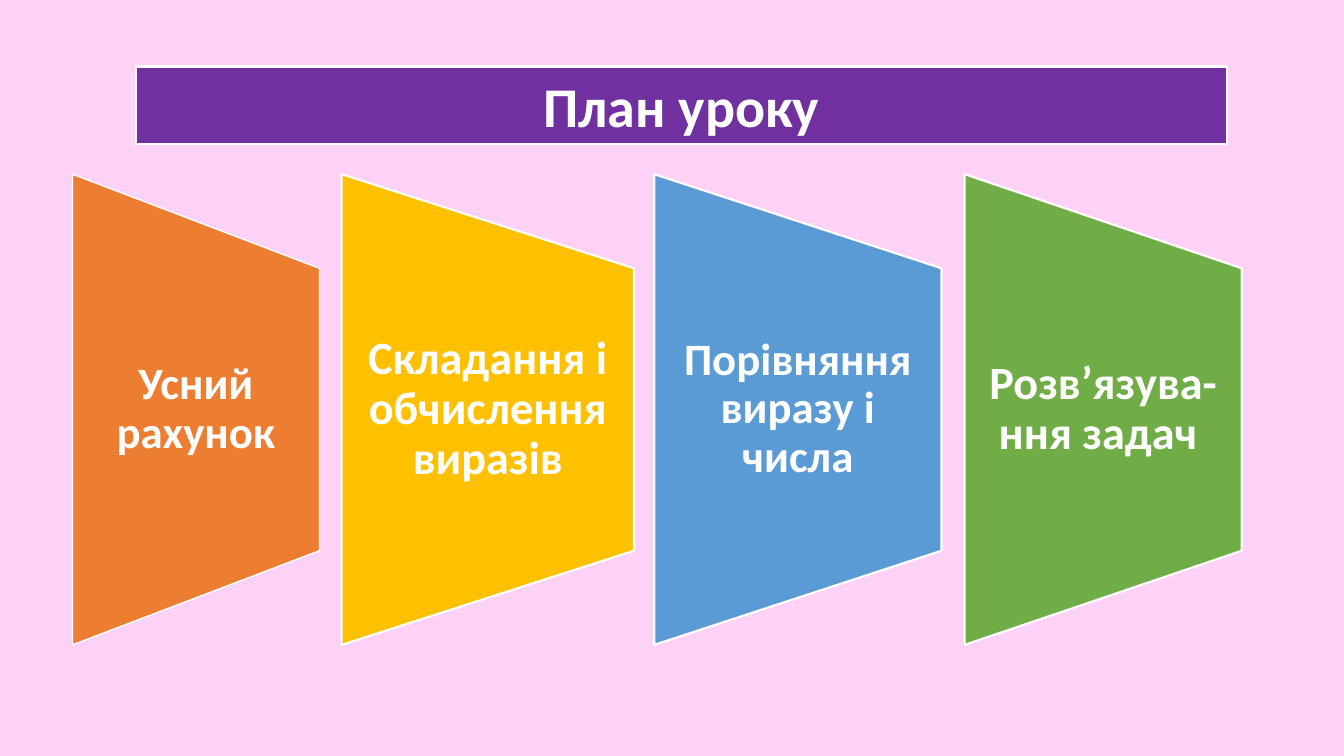
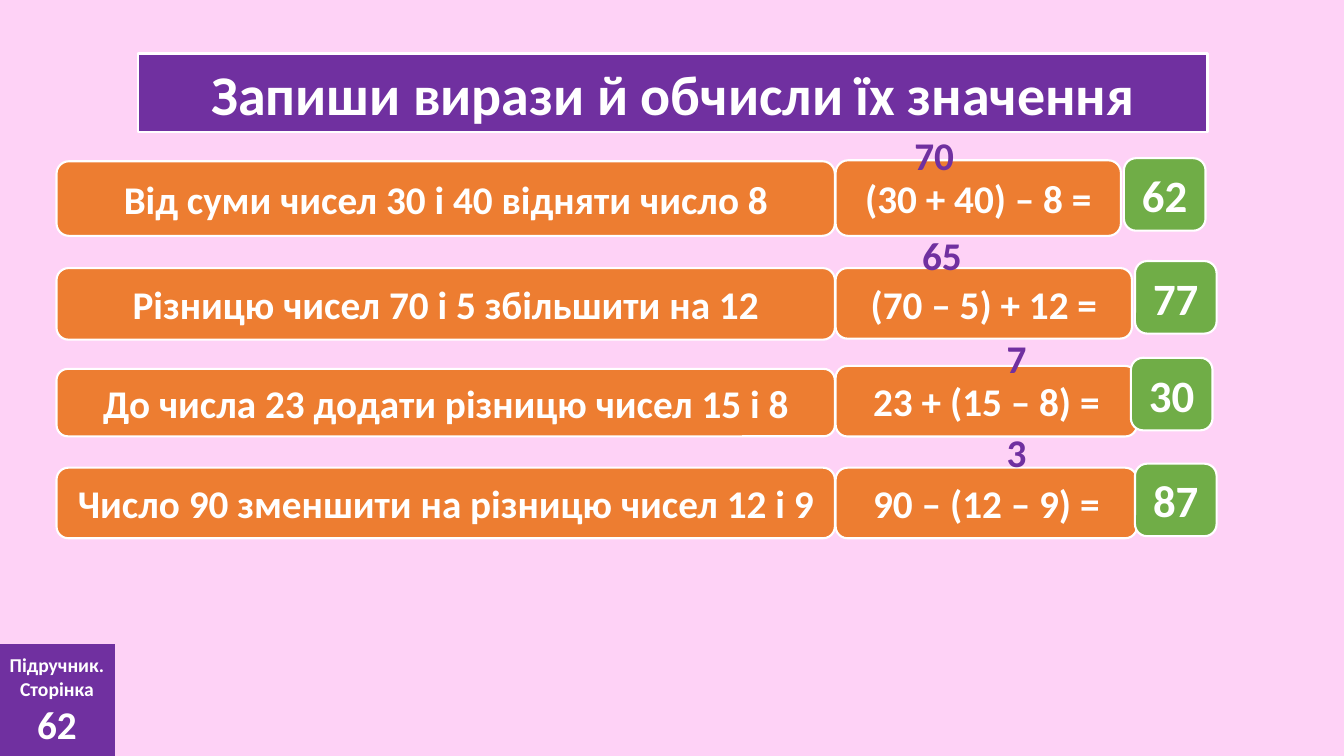
from pptx import Presentation
from pptx.dml.color import RGBColor
from pptx.enum.shapes import MSO_SHAPE
from pptx.enum.text import MSO_ANCHOR, PP_ALIGN
from pptx.util import Pt

FONT = "Calibri"
PINK, PURPLE, WHITE = "FED2F6", "7030A0", "FFFFFF"
ORANGE, YELLOW, BLUE, GREEN = "ED7D31", "FFC000", "5B9BD5", "70AD47"

PLAN_TITLE = ("План уроку", (97.2, 47.5, 779, 55.4))
PLAN_STEPS = [
    ("Усний рахунок", ORANGE, 51.8, 176.4, 32, 1),
    ("Складання і обчислення виразів", YELLOW, 244.1, 208.8, 33, 1.5),
    ("Порівняння виразу і числа", BLUE, 467.3, 205.2, 32, 1.5),
    ("Розв’язува-ння задач ", GREEN, 689, 198, 33, 1.5),
]
PANEL_TOP, PANEL_HEIGHT = 124.4, 336.2

TASK_TITLE = ("Запиши вирази й обчисли їх значення", (98.6, 38.2, 764, 56.2))
STATEMENT_LEFT, STATEMENT_WIDTH = 40.4, 556
EXPRESSION_LEFT = 596.9
RESULT_WIDTH, RESULT_HEIGHT = 58.3, 51.8
TASKS = [
    {"statement": ("Від суми чисел 30 і 40 відняти число 8", 115.2, 53.3),
     "expression": ("(30 + 40) – 8 =", 114.5, 203.8, 54),
     "partial": ("70", 638.1, 85), "answer": ("62", 802.8, 113)},
    {"statement": ("Різницю чисел 70 і 5 збільшити на 12", 191.5, 51.1),
     "expression": ("(70 – 5) + 12 =", 191.5, 211.7, 50.4),
     "partial": ("65", 643.7, 156.2), "answer": ("77", 810.7, 186.5)},
    {"statement": ("До числа 23 додати різницю чисел 15 і 8", 263.5, 48.2),
     "expression": ("23 + (15 – 8) =", 261.4, 215.3, 50.4),
     "partial": ("7", 697, 229.7), "answer": ("30", 807.8, 255.6)},
    {"statement": ("Число 90 зменшити на різницю чисел 12 і 9", 334.1, 50.4),
     "expression": ("90 – (12 – 9) =", 334.1, 215.3, 50.4),
     "partial": ("3", 697, 296.6), "answer": ("87", 810.7, 331.2)},
]
PAGE_BADGE = [("Підручник.", 14), ("Сторінка", 14), ("62", 28)]
BADGE_BOX = (-0.7, 460.1, 82.8, 79.9)


def rgb(value):
    """Turn a hex string into a colour."""
    return RGBColor.from_string(value)


def write(shape, lines, color=WHITE, margin=7.2, spacing=None):
    """Write centred bold lines, each a text and its size."""
    frame = shape.text_frame
    frame.word_wrap = True
    frame.vertical_anchor = MSO_ANCHOR.MIDDLE
    frame.margin_left = frame.margin_right = Pt(margin)
    for index, (text, size) in enumerate(lines):
        paragraph = frame.add_paragraph() if index else frame.paragraphs[0]
        paragraph.alignment = PP_ALIGN.CENTER
        if spacing:
            paragraph.line_spacing = spacing
        run = paragraph.add_run()
        run.text = text
        run.font.name = FONT
        run.font.size = Pt(size)
        run.font.bold = True
        run.font.color.rgb = rgb(color)


def add_block(slide, kind, box, fill=None, outline=1.5):
    """Add a preset shape with an optional fill and white outline."""
    shape = slide.shapes.add_shape(kind, *map(Pt, box))
    shape.shadow.inherit = False
    if fill:
        shape.fill.solid()
        shape.fill.fore_color.rgb = rgb(fill)
    else:
        shape.fill.background()
    if outline:
        shape.line.color.rgb = rgb(WHITE)
        shape.line.width = Pt(outline)
    else:
        shape.line.fill.background()
    return shape


def add_rounded(slide, text, box, size, fill=None):
    """Add a rounded box, or purple text alone when it has no fill."""
    shape = add_block(slide, MSO_SHAPE.ROUNDED_RECTANGLE, box, fill, 1.5 if fill else 0)
    write(shape, [(text, size)], WHITE if fill else PURPLE)


def add_slide(presentation, title):
    """Add a blank slide with its title band."""
    slide = presentation.slides.add_slide(presentation.slide_layouts[6])
    text, box = title
    write(add_block(slide, MSO_SHAPE.RECTANGLE, box, PURPLE), [(text, 40)])
    return slide


def add_panel(slide, text, fill, left, width, size, outline):
    """Add a panel turned to taper rightwards, with upright text over it."""
    turned_left = left + (width - PANEL_HEIGHT) / 2
    turned_top = PANEL_TOP + (PANEL_HEIGHT - width) / 2
    panel = add_block(slide, MSO_SHAPE.FLOWCHART_MANUAL_OPERATION,
                      (turned_left, turned_top, PANEL_HEIGHT, width), fill, outline)
    panel.rotation = 270
    label_box = (left, PANEL_TOP + PANEL_HEIGHT / 5, width, PANEL_HEIGHT * 3 / 5)
    label = slide.shapes.add_textbox(*map(Pt, label_box))
    write(label, [(text, size)], margin=16, spacing=0.9)


def add_task(slide, task):
    """Add a statement, its expression, the answer and the partial result."""
    text, top, height = task["statement"]
    add_rounded(slide, text, (STATEMENT_LEFT, top, STATEMENT_WIDTH, height), 28, ORANGE)
    text, top, width, height = task["expression"]
    add_rounded(slide, text, (EXPRESSION_LEFT, top, width, height), 28, ORANGE)
    for part, size, fill in (("answer", 32, GREEN), ("partial", 28, None)):
        text, left, top = task[part]
        add_rounded(slide, text, (left, top, RESULT_WIDTH, RESULT_HEIGHT), size, fill)


def main():
    """Build and save both slides."""
    presentation = Presentation()
    presentation.slide_width, presentation.slide_height = Pt(960), Pt(540)
    background = presentation.slide_master.background.fill
    background.solid()
    background.fore_color.rgb = rgb(PINK)

    plan = add_slide(presentation, PLAN_TITLE)
    for step in PLAN_STEPS:
        add_panel(plan, *step)

    exercise = add_slide(presentation, TASK_TITLE)
    for task in TASKS:
        add_task(exercise, task)
    badge = add_block(exercise, MSO_SHAPE.RECTANGLE, BADGE_BOX, PURPLE, 0)
    write(badge, PAGE_BADGE, margin=3.6)

    presentation.save("out.pptx")


if __name__ == "__main__":
    main()
